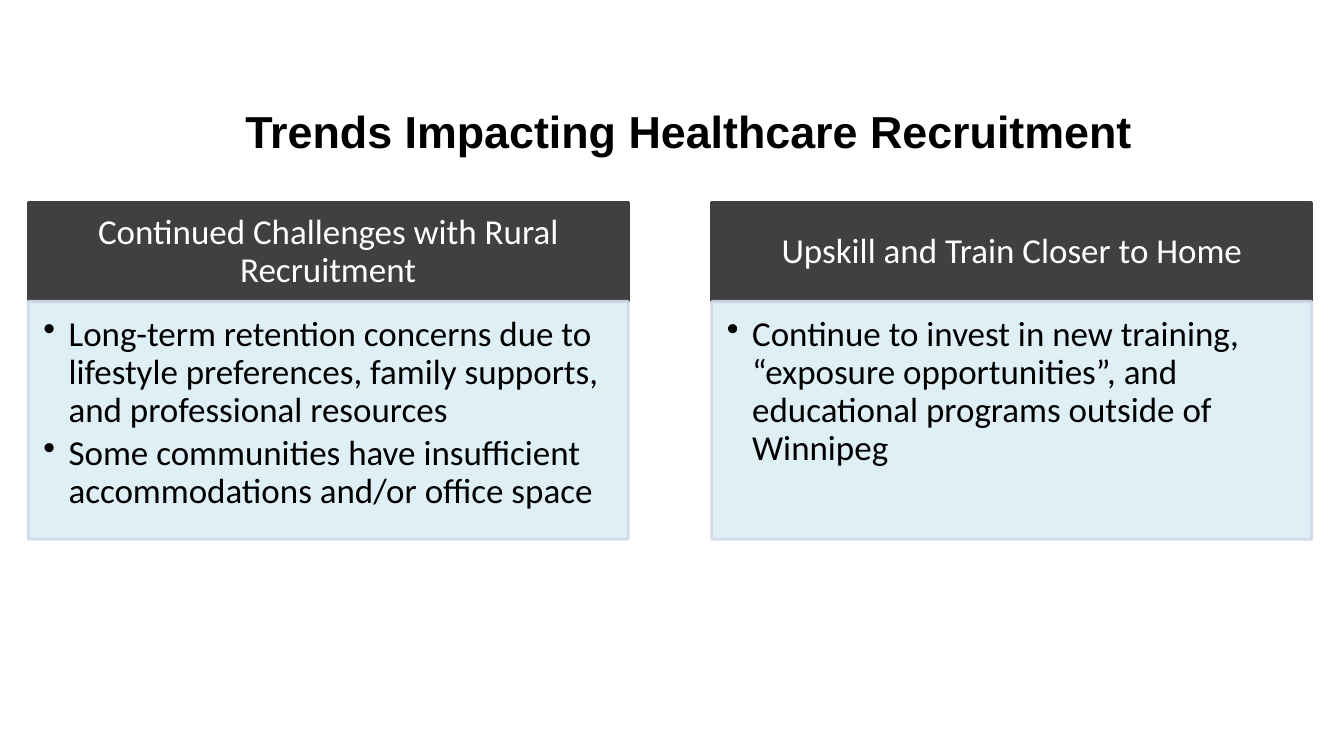
import lxml.etree
import pptx
import pptx.dml.color
import pptx.enum.shapes
import pptx.enum.text
import pptx.oxml.ns
import pptx.util

SCALE = 9144
COLORS = {
    "black": "000000",
    "white": "FFFFFF",
    "header": "404040",
    "body": "DBEEF4",
    "body_line": "D0D8E8",
}
CENTER = pptx.enum.text.PP_ALIGN.CENTER
TOP = pptx.enum.text.MSO_ANCHOR.TOP
MIDDLE = pptx.enum.text.MSO_ANCHOR.MIDDLE

TITLE = "Trends Impacting Healthcare Recruitment"
TITLE_BOX = (125, 92, 1117, 59)
CARD_LEFT, CARD_TOP, CARD_WIDTH, CARD_HEIGHT = 28, 201, 595, 334
CARD_STEP = 678
HEADER_HEIGHT = 98
CARDS = [
    ("Continued Challenges with Rural Recruitment", [
        "Long-term retention concerns due to lifestyle preferences, family supports, "
        "and professional resources",
        "Some communities have insufficient accommodations and/or office space",
    ]),
    ("Upskill and Train Closer to Home", [
        "Continue to invest in new training, “exposure opportunities”, "
        "and educational programs outside of Winnipeg",
    ]),
]


def px(length):
    return pptx.util.Emu(length * SCALE)


def rgb(name):
    return pptx.dml.color.RGBColor.from_string(COLORS[name])


def set_font(paragraph, name, size, color, bold=False):
    font = paragraph.font
    font.name = name
    font.size = pptx.util.Pt(size)
    font.bold = bold
    font.color.rgb = rgb(color)


def set_frame(frame, insets, anchor):
    frame.word_wrap = True
    frame.vertical_anchor = anchor
    (frame.margin_left, frame.margin_top,
     frame.margin_right, frame.margin_bottom) = map(px, insets)


def set_opacity(shape, percent):
    tag = pptx.oxml.ns.qn("a:srgbClr")
    for color in shape.fill._xPr.iter(tag):
        alpha = lxml.etree.SubElement(color, pptx.oxml.ns.qn("a:alpha"))
        alpha.set("val", str(percent * 1000))


def add_bullet(paragraph, indent):
    properties = paragraph._p.get_or_add_pPr()
    properties.set("marL", str(px(indent)))
    properties.set("indent", str(px(-indent)))
    bullet = lxml.etree.SubElement(properties, pptx.oxml.ns.qn("a:buChar"))
    bullet.set("char", "•")


def add_panel(slide, box, fill, line):
    shape = slide.shapes.add_shape(
        pptx.enum.shapes.MSO_SHAPE.RECTANGLE, *map(px, box))
    shape.shadow.inherit = False
    shape.fill.solid()
    shape.fill.fore_color.rgb = rgb(fill)
    shape.line.color.rgb = rgb(line)
    shape.line.width = pptx.util.Pt(2)
    return shape


def add_title(slide, box):
    frame = slide.shapes.add_textbox(*map(px, box)).text_frame
    set_frame(frame, (0, 0, 0, 0), TOP)
    paragraph = frame.paragraphs[0]
    paragraph.text = TITLE
    paragraph.alignment = CENTER
    paragraph.line_spacing = 1.2
    set_font(paragraph, "Arial", 32, "black", bold=True)


def add_header(slide, box, text):
    frame = add_panel(slide, box, "header", "header").text_frame
    set_frame(frame, (19, 11, 19, 11), MIDDLE)
    paragraph = frame.paragraphs[0]
    paragraph.text = text
    paragraph.alignment = CENTER
    paragraph.line_spacing = 0.9
    set_font(paragraph, "Calibri", 25, "white")


def add_body(slide, box, points):
    panel = add_panel(slide, box, "body", "body_line")
    set_opacity(panel, 90)
    frame = panel.text_frame
    set_frame(frame, (15, 15, 19, 22), TOP)
    for index, point in enumerate(points):
        paragraph = frame.add_paragraph() if index else frame.paragraphs[0]
        paragraph.text = point
        paragraph.level = 1
        paragraph.alignment = pptx.enum.text.PP_ALIGN.LEFT
        paragraph.line_spacing = 0.9
        paragraph.space_after = pptx.util.Pt(4)
        add_bullet(paragraph, 25)
        set_font(paragraph, "Calibri", 25, "black")


def add_card(slide, box, heading, points):
    left, top, width, height = box
    add_header(slide, (left, top, width, HEADER_HEIGHT), heading)
    add_body(slide, (left, top + HEADER_HEIGHT, width, height - HEADER_HEIGHT), points)


def main():
    presentation = pptx.Presentation()
    presentation.slide_width = px(1333)
    presentation.slide_height = px(750)
    slide = presentation.slides.add_slide(presentation.slide_layouts[6])
    for index, (heading, points) in enumerate(CARDS):
        left = CARD_LEFT + index * CARD_STEP
        add_card(slide, (left, CARD_TOP, CARD_WIDTH, CARD_HEIGHT), heading, points)
    add_title(slide, TITLE_BOX)
    presentation.save("out.pptx")


if __name__ == "__main__":
    main()
